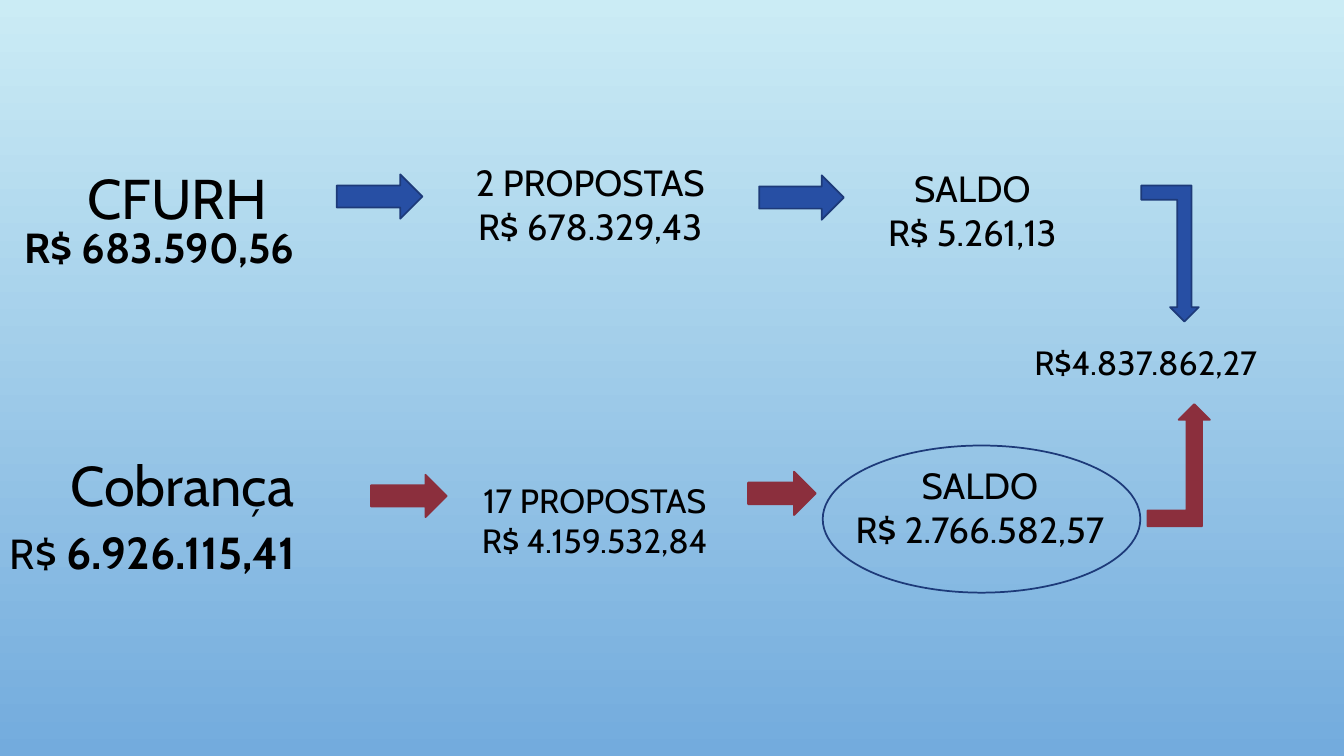
from dataclasses import dataclass
from typing import Any

import pptx
import pptx.dml.color
import pptx.enum.shapes
import pptx.enum.text
import pptx.util
from lxml import etree

Inches = pptx.util.Inches
Pt = pptx.util.Pt
Kind = pptx.enum.shapes.MSO_SHAPE
Align = pptx.enum.text.PP_ALIGN
Box = tuple[float, float, float, float]


def color(code: str) -> Any:
    return pptx.dml.color.RGBColor.from_string(code)


@dataclass(frozen=True)
class Theme:
    font: str = "Cabin"
    ink: str = "000000"
    sky: str = "CBECF5"
    sea: str = "73ABDD"
    blue: str = "274FA4"
    navy: str = "1D3A79"
    red: str = "8B2F3D"
    title: int = 40
    total: int = 32
    amount: int = 30
    step: int = 26
    small: int = 24
    edge: float = 1.25


@dataclass(frozen=True)
class Run:
    text: str
    size: int
    bold: bool = False


@dataclass(frozen=True)
class Label:
    box: Box
    lines: list[list[Run]]
    align: Any = Align.LEFT
    space: float = 1.0


@dataclass(frozen=True)
class Figure:
    kind: Any
    box: Box
    fill: str | None
    line: str
    down: bool = False


THEME = Theme()


def assign(target: Any, values: dict[str, Any]) -> None:
    for name, value in values.items():
        setattr(target, name, value)


def step(box: Box, size: int, *texts: str) -> Label:
    return Label(box, [[Run(text, size)] for text in texts], Align.CENTER)


def arrow(box: Box) -> Figure:
    return Figure(Kind.RIGHT_ARROW, box, THEME.blue, THEME.navy)


def red_arrow(kind: Any, box: Box) -> Figure:
    return Figure(kind, box, THEME.red, THEME.red)


ITEMS: list[Label | Figure] = [
    Label((0.14, 2.05, 3.62, 0.61), [[Run("R$ 683.590,56", THEME.amount, True)]], space=1.2),
    Label((0.77, 1.57, 2.23, 0.77), [[Run("CFURH", THEME.title)]]),
    arrow((3.34, 1.73, 0.85, 0.44)),
    step((4.39, 1.54, 2.93, 0.98), THEME.step, "2 PROPOSTAS", "R$ 678.329,43"),
    arrow((7.53, 1.74, 0.84, 0.44)),
    step((8.18, 1.6, 2.93, 0.98), THEME.step, "SALDO", "R$ 5.261,13"),
    Label((0.6, 4.42, 2.81, 0.77), [[Run("Cobrança", THEME.title)]]),
    red_arrow(Kind.RIGHT_ARROW, (3.68, 4.71, 0.75, 0.42)),
    Label(
        (0, 5.05, 4.09, 0.61),
        [[Run("R$ ", THEME.amount), Run("6.926.115,41", THEME.total, True)]],
        space=1.2,
    ),
    step((4.37, 4.71, 3.06, 0.91), THEME.small, "17 PROPOSTAS", "R$ 4.159.532,84"),
    red_arrow(Kind.RIGHT_ARROW, (7.42, 4.68, 0.67, 0.43)),
    step((8.09, 4.55, 3.26, 0.98), THEME.step, "SALDO", "R$ 2.766.582,57"),
    Label((10.16, 3.34, 2.86, 0.81), [[Run("R$4.837.862,27", THEME.small)]]),
    red_arrow(Kind.BENT_UP_ARROW, (11.38, 4.01, 0.62, 1.21)),
    Figure(Kind.BENT_UP_ARROW, (11.32, 1.84, 0.57, 1.35), THEME.blue, THEME.navy, True),
    Figure(Kind.OVAL, (8.16, 4.42, 3.15, 1.46), None, THEME.navy),
]


def draw_label(slide: Any, label: Label) -> None:
    frame = slide.shapes.add_textbox(*map(Inches, label.box)).text_frame
    frame.word_wrap = True
    for index, line in enumerate(label.lines):
        para = frame.add_paragraph() if index else frame.paragraphs[0]
        assign(para, {"alignment": label.align, "line_spacing": label.space})
        for part in line:
            run = para.add_run()
            run.text = part.text
            assign(run.font, {"name": THEME.font, "size": Pt(part.size), "bold": part.bold})
            run.font.color.rgb = color(THEME.ink)


def draw_figure(slide: Any, figure: Figure) -> None:
    shape = slide.shapes.add_shape(figure.kind, *map(Inches, figure.box))
    shape.shadow.inherit = False
    if figure.fill:
        shape.fill.solid()
        shape.fill.fore_color.rgb = color(figure.fill)
    else:
        shape.fill.background()
    shape.line.color.rgb = color(figure.line)
    shape.line.width = Pt(THEME.edge)
    if figure.down:
        shape.rotation = 180
        frame: etree._Element = shape._element.spPr.xfrm
        frame.set("flipH", "1")


def paint(slide: Any) -> None:
    fill = slide.background.fill
    fill.gradient()
    fill.gradient_angle = 270
    for stop, code, place in zip(fill.gradient_stops, (THEME.sky, THEME.sea), (0, 1)):
        stop.color.rgb = color(code)
        stop.position = place


def main() -> None:
    deck = pptx.Presentation()
    assign(deck, {"slide_width": Inches(13.33), "slide_height": Inches(7.5)})
    slide = deck.slides.add_slide(deck.slide_layouts[6])
    paint(slide)
    for item in ITEMS:
        if isinstance(item, Label):
            draw_label(slide, item)
        else:
            draw_figure(slide, item)
    deck.save("out.pptx")


if __name__ == "__main__":
    main()
